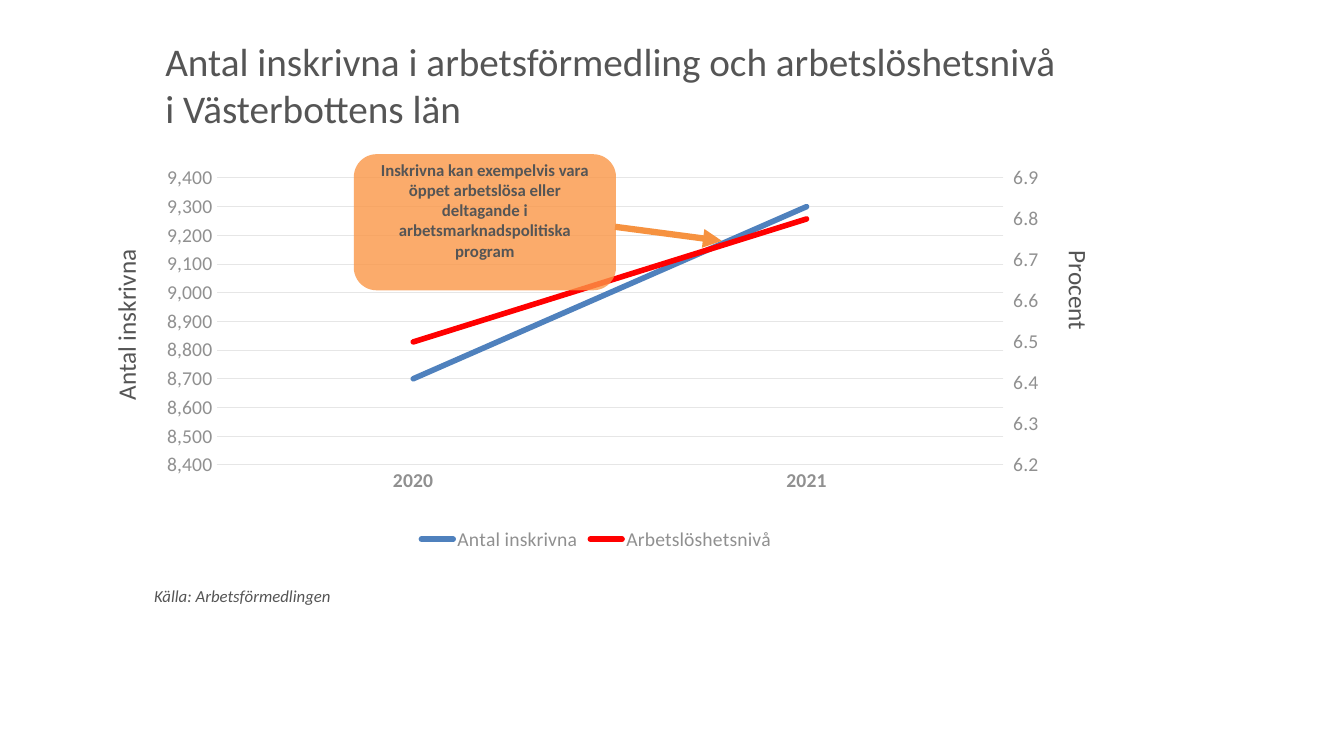
from copy import deepcopy
from dataclasses import dataclass

from lxml import etree
from pptx import Presentation
from pptx.chart.axis import ValueAxis
from pptx.chart.data import CategoryChartData
from pptx.dml.color import RGBColor
from pptx.enum.chart import XL_CHART_TYPE as ChartType, XL_LEGEND_POSITION as LegendPosition
from pptx.enum.chart import XL_TICK_MARK as TickMark
from pptx.enum.shapes import MSO_CONNECTOR as Connector, MSO_SHAPE as Shape
from pptx.enum.text import MSO_ANCHOR as Anchor, MSO_AUTO_SIZE as AutoSize, PP_ALIGN as Align
from pptx.oxml.ns import qn
from pptx.util import Inches, Pt


@dataclass(frozen=True)
class Theme:
    font: str = "Calibri"
    ink: str = "555555"
    muted: str = "909090"
    grid: str = "E6E6E6"
    enrolled: str = "4F81BD"
    unemployment: str = "FF0000"
    callout: str = "FA9646"
    arrow: str = "F69240"
    title_size: int = 28
    axis_title_size: int = 18
    label_size: int = 14
    note_size: int = 12


def color(value):
    return RGBColor.from_string(value)


class PageBuilder:
    def __init__(self, deck, theme):
        self.theme = theme
        self.page = deck.slides.add_slide(deck.slide_layouts[5])

    def style(self, font, size, shade, bold=False, italic=False):
        font.name, font.size = self.theme.font, Pt(size)
        font.bold, font.italic = bold, italic
        font.color.rgb = color(shade)

    def set_text(self, box, text, size, align=Align.LEFT, anchor=Anchor.TOP, **emphasis):
        frame = box.text_frame
        frame.word_wrap = True
        frame.auto_size = AutoSize.NONE
        frame.vertical_anchor = anchor
        para = frame.paragraphs[0]
        para.text, para.alignment = text, align
        self.style(para.font, size, self.theme.ink, **emphasis)

    def title(self, text, left, top, width, height):
        box = self.page.shapes.title
        box.left, box.top = Inches(left), Inches(top)
        box.width, box.height = Inches(width), Inches(height)
        self.set_text(box, text, self.theme.title_size)

    def label(self, text, left, top, width, height, size, rotation=0, **emphasis):
        box = self.page.shapes.add_textbox(
            Inches(left), Inches(top), Inches(width), Inches(height))
        box.rotation = rotation
        self.set_text(box, text, size, **emphasis)

    def callout(self, text, left, top, width, height, opacity):
        box = self.page.shapes.add_shape(
            Shape.ROUNDED_RECTANGLE, Inches(left), Inches(top), Inches(width), Inches(height))
        box.shadow.inherit = False
        box.fill.solid()
        box.fill.fore_color.rgb = color(self.theme.callout)
        box.line.fill.background()
        tint = box._element.spPr.find(f"{qn('a:solidFill')}/{qn('a:srgbClr')}")
        etree.SubElement(tint, qn("a:alpha"), val=str(opacity * 1000))
        self.set_text(box, text, self.theme.note_size, Align.CENTER, Anchor.MIDDLE, bold=True)
        box.text_frame.margin_bottom = Inches(0.29)

    def arrow(self, start, end, width):
        line = self.page.shapes.add_connector(
            Connector.STRAIGHT, *(Inches(value) for value in (*start, *end)))
        line.line.color.rgb = color(self.theme.arrow)
        line.line.width = Pt(width)
        properties = line._element.spPr
        etree.SubElement(properties.find(qn("a:ln")), qn("a:tailEnd"), type="triangle")
        etree.SubElement(properties, qn("a:effectLst"))

    def axis(self, axis, number_format=None, bold=False):
        axis.major_tick_mark = axis.minor_tick_mark = TickMark.NONE
        self.style(axis.tick_labels.font, self.theme.label_size, self.theme.muted, bold=bold)
        if number_format:
            axis.tick_labels.number_format = number_format
            axis.tick_labels.number_format_is_linked = False
            axis.format.line.fill.background()

    def scale(self, axis, low, high, step):
        axis.minimum_scale, axis.maximum_scale, axis.major_unit = low, high, step

    def grid_line(self, line):
        line.color.rgb = color(self.theme.grid)
        line.width = Pt(0.75)

    def line_chart(self, categories, series, left, top, width, height, plot_area):
        data = CategoryChartData()
        data.categories = categories
        for name, values, _ in series:
            data.add_series(name, values)
        chart = self.page.shapes.add_chart(
            ChartType.LINE, Inches(left), Inches(top), Inches(width), Inches(height), data).chart
        self.style(chart.font, 10, self.theme.ink)
        chart.has_title = False
        chart.has_legend = True
        chart.legend.position = LegendPosition.BOTTOM
        chart.legend.include_in_layout = False
        self.style(chart.legend.font, self.theme.label_size, self.theme.muted)

        # Series lines with round ends
        for item, (_, _, shade) in zip(chart.plots[0].series, series):
            item.smooth = False
            item.format.line.color.rgb = color(shade)
            item.format.line.width = Pt(4)
        for stroke in chart.element.xpath(".//c:ser/c:spPr/a:ln"):
            stroke.set("cap", "rnd")

        # Left and bottom axes
        self.axis(chart.category_axis, bold=True)
        self.grid_line(chart.category_axis.format.line)
        self.axis(chart.value_axis, "#,##0")
        self.scale(chart.value_axis, 8400, 9400, 100)
        chart.value_axis.has_major_gridlines = True
        self.grid_line(chart.value_axis.major_gridlines.format.line)

        self.place_plot(chart, plot_area)
        self.add_right_axis(chart)

    def place_plot(self, chart, plot_area):
        plot = chart.element.find(f".//{qn('c:plotArea')}")
        for old in plot.findall(qn("c:layout")):
            plot.remove(old)
        layout = etree.Element(qn("c:layout"))
        manual = etree.SubElement(layout, qn("c:manualLayout"))
        settings = [("layoutTarget", "inner"), ("xMode", "edge"), ("yMode", "edge")]
        for tag, value in settings + list(zip("xywh", plot_area)):
            etree.SubElement(manual, qn(f"c:{tag}"), val=str(value))
        plot.insert(0, layout)

    def add_right_axis(self, chart):
        plot = chart.element.find(f".//{qn('c:plotArea')}")
        lines, categories, values = (
            plot.find(qn(f"c:{tag}")) for tag in ("lineChart", "catAx", "valAx"))
        right_lines, right_categories, right_values = map(deepcopy, (lines, categories, values))
        lines.remove(lines.findall(qn("c:ser"))[1])
        right_lines.remove(right_lines.find(qn("c:ser")))

        # The second pair of axes gets its own identifiers
        for node, ids in ((right_lines, ("5001", "5002")),
                          (right_categories, ("5001",)), (right_values, ("5002",))):
            for item, value in zip(node.findall(qn("c:axId")), ids):
                item.set("val", value)
        right_categories.find(qn("c:crossAx")).set("val", "5002")
        right_categories.find(qn("c:delete")).set("val", "1")
        right_values.find(qn("c:crossAx")).set("val", "5001")
        right_values.find(qn("c:crosses")).set("val", "max")
        right_values.find(qn("c:axPos")).set("val", "r")
        lines.addnext(right_lines)
        values.addnext(right_values)
        right_values.addnext(right_categories)

        right = ValueAxis(right_values)
        right.has_major_gridlines = False
        self.axis(right, "0.0")
        right.major_tick_mark = TickMark.OUTSIDE
        self.scale(right, 6.2, 6.9, 0.1)


def main():
    deck = Presentation()
    deck.slide_width, deck.slide_height = Inches(13.33), Inches(7.5)
    theme = Theme()
    builder = PageBuilder(deck, theme)

    # Title
    builder.title("Antal inskrivna i arbetsförmedling och arbetslöshetsnivå i Västerbottens län",
                  1.54, 0.32, 9.07, 1.04)

    # Chart with axis titles
    builder.line_chart(
        ["2020", "2021"],
        [("Antal inskrivna", (8700, 9300), theme.enrolled),
         ("Arbetslöshetsnivå", (6.5, 6.8), theme.unemployment)],
        1.43, 1.61, 8.97, 3.9, plot_area=(0.08, 0.04, 0.87, 0.73))
    builder.label("Antal inskrivna", 0.2, 2.82, 2.1, 0.4, theme.axis_title_size, rotation=270)
    builder.label("Procent", 9.79, 3.1, 1.82, 0.4, theme.axis_title_size, rotation=90)

    # Source line
    builder.label("Källa: Arbetsförmedlingen", 1.43, 5.76, 4.84, 0.3,
                  theme.note_size, italic=True)

    # Callout and its arrow
    builder.callout("Inskrivna kan exempelvis vara öppet arbetslösa eller deltagande i "
                    "arbetsmarknadspolitiska program", 3.51, 1.53, 2.6, 1.35, opacity=80)
    builder.arrow((6.1, 2.25), (7.16, 2.39), 4.5)

    deck.save("out.pptx")


if __name__ == "__main__":
    main()
